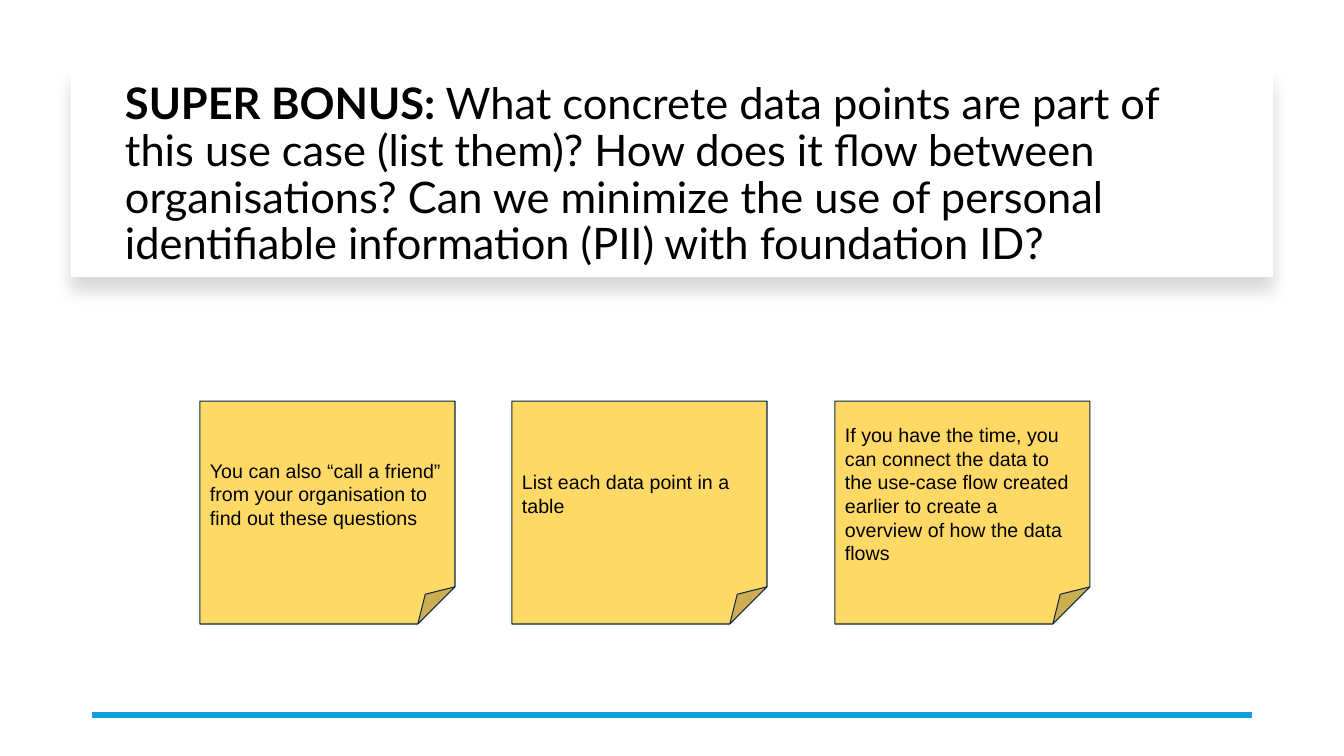
"""Build the super bonus question slide with three sticky notes."""
from lxml import etree
from pptx import Presentation
from pptx import util as u
from pptx.dml.color import RGBColor
from pptx.enum import shapes, text
from pptx.oxml import parse_xml
from pptx.oxml.ns import nsdecls, qn

QUESTION = [
    ("SUPER BONUS: ", True),
    ("What concrete data points are part of this use case (list them)? "
     "How does it flow between organisations? Can we minimize the use of "
     "personal identifiable information (PII) with foundation ID?", False),
]
NOTES = [
    (200, "You can also “call a friend” from your organisation to find out these questions"),
    (512, "List each data point in a table"),
    (835, "If you have the time, you can connect the data to the use-case flow "
          "created earlier to create a overview of how the data flows"),
]
SLIDE_SIZE = (1344, 756)
CARD = (71, 68, 1202, 209)
TITLE = (115, 90, 1110, 171)
NOTE_TOP, NOTE_WIDTH, NOTE_HEIGHT = 401, 255, 223
RULE_LEFT, RULE_RIGHT, RULE_TOP = 92, 1252, 715

WHITE = RGBColor(0xFF, 0xFF, 0xFF)
BLACK = RGBColor(0x00, 0x00, 0x00)
YELLOW = RGBColor(0xFF, 0xD9, 0x66)
NAVY = RGBColor(0x0E, 0x28, 0x41)
BLUE = RGBColor(0x0F, 0x9E, 0xD5)


def px(*lengths):
    return [u.Emu(round(length * 914400 / 100.8)) for length in lengths]


def write(shape, spans, *, font, size, inset, spacing=1.0):
    frame = shape.text_frame
    frame.word_wrap = True
    frame.vertical_anchor = text.MSO_ANCHOR.MIDDLE
    frame.margin_left, frame.margin_right = px(10, 10)
    frame.margin_top, frame.margin_bottom = px(inset, inset)
    para = frame.paragraphs[0]
    para.alignment = text.PP_ALIGN.LEFT
    para.line_spacing = spacing
    for words, bold in spans:
        span = para.add_run()
        span.text = words
        span.font.name = font
        span.font.size = u.Pt(size)
        span.font.bold = bold
        span.font.color.rgb = BLACK


def add_card(page):
    card = page.shapes.add_shape(shapes.MSO_SHAPE.RECTANGLE, *px(*CARD))
    card.fill.solid()
    card.fill.fore_color.rgb = WHITE
    card.line.fill.background()
    card.element.spPr.append(parse_xml(
        f'<a:effectLst {nsdecls("a")}>'
        f'<a:outerShdw blurRad="{u.Pt(11)}" dist="{u.Pt(10)}" dir="5400000" '
        'algn="t" rotWithShape="0">'
        f'<a:srgbClr val="{BLACK}"><a:alpha val="15000"/></a:srgbClr>'
        '</a:outerShdw></a:effectLst>'))


def add_rule(page):
    rule = page.shapes.add_connector(
        shapes.MSO_CONNECTOR.STRAIGHT,
        *px(RULE_RIGHT, RULE_TOP, RULE_LEFT, RULE_TOP))
    rule.line.color.rgb = BLUE
    rule.line.width = u.Pt(4.5)
    etree.SubElement(rule.element.spPr, qn("a:effectLst"))


def add_note(page, left, words):
    note = page.shapes.add_shape(
        shapes.MSO_SHAPE.FOLDED_CORNER,
        *px(left, NOTE_TOP, NOTE_WIDTH, NOTE_HEIGHT))
    note.shadow.inherit = False
    note.fill.solid()
    note.fill.fore_color.rgb = YELLOW
    note.line.color.rgb = NAVY
    note.line.width = u.Pt(0.75)
    write(note, [(words, False)], font="Arial", size=14, inset=10)


def main():
    deck = Presentation()
    deck.slide_width, deck.slide_height = px(*SLIDE_SIZE)
    page = deck.slides.add_slide(deck.slide_layouts[6])
    add_card(page)
    title = page.shapes.add_textbox(*px(*TITLE))
    write(title, QUESTION, font="Lato", size=31, inset=5, spacing=0.9)
    add_rule(page)
    for left, words in NOTES:
        add_note(page, left, words)
    deck.save("out.pptx")


if __name__ == "__main__":
    main()
